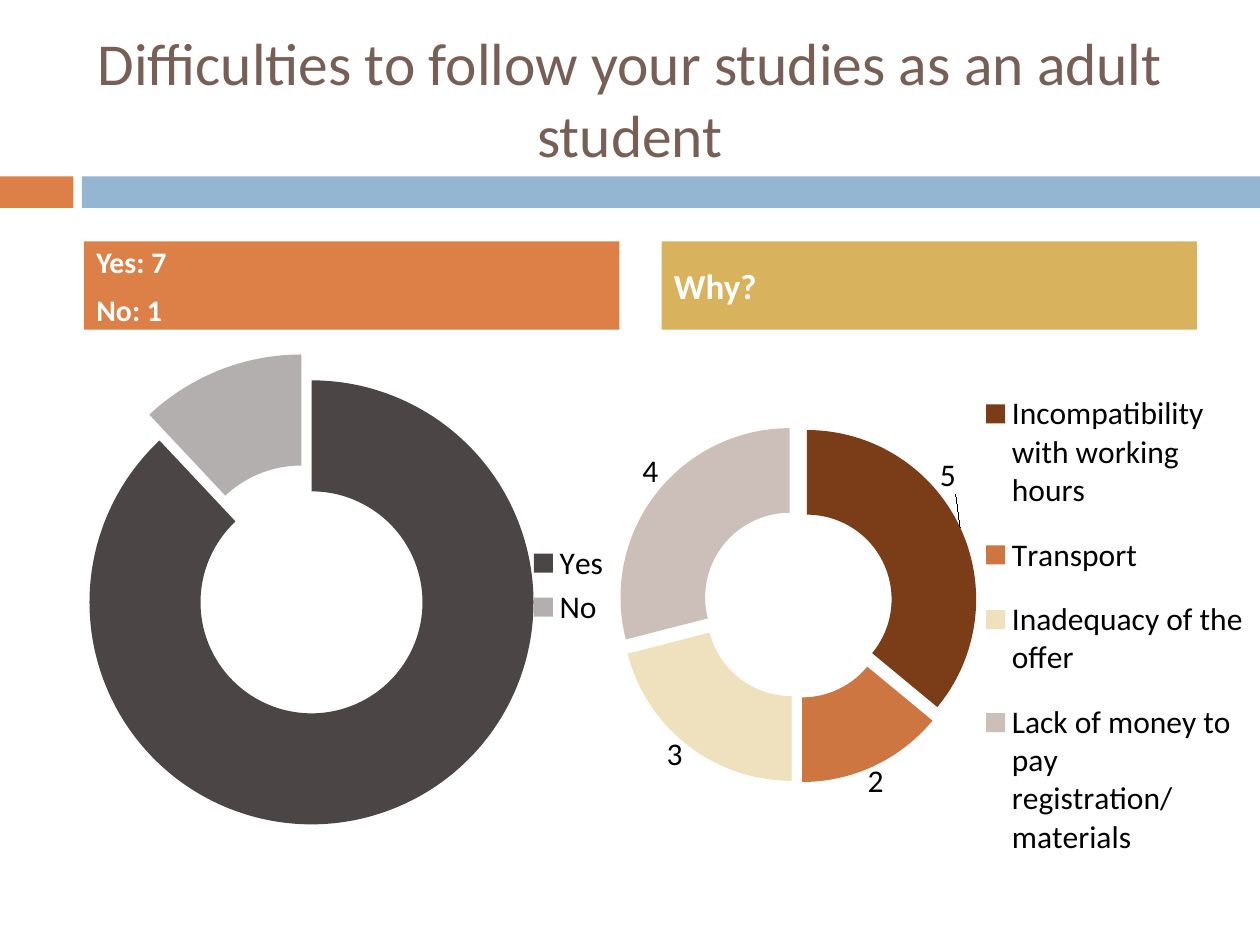
from lxml import etree
from pptx import Presentation
from pptx.chart.data import CategoryChartData
from pptx.dml.color import RGBColor
from pptx.enum.chart import XL_CHART_TYPE, XL_LEGEND_POSITION
from pptx.enum.shapes import MSO_SHAPE
from pptx.enum.text import MSO_ANCHOR, PP_ALIGN
from pptx.oxml.ns import qn
from pptx.util import Pt

RECT = MSO_SHAPE.RECTANGLE
RING = XL_CHART_TYPE.DOUGHNUT
RIGHT = XL_LEGEND_POSITION.RIGHT
MIDDLE = MSO_ANCHOR.MIDDLE
CENTER, LEFT = PP_ALIGN.CENTER, PP_ALIGN.LEFT

THEME = {
    "font": "Calibri", "title": "775F55", "text": "000000", "white": "FFFFFF",
    "orange": "DD8047", "blue": "94B6D2", "gold": "D8B25C",
    "title size": 34, "chart size": 18,
}
TITLE = "Difficulties to follow your studies as an adult student"
BANDS = [  # left, width, colour
    (0, 42, "orange"),
    (46.8, 673.2, "blue"),
]
HEADS = [  # left, colour, text size, lines
    (48, "orange", 17, ["Yes: 7", "No: 1"]),
    (378, "gold", 20, ["Why?"]),
]
# Plot, legend and label places are fractions of the chart's own box.
CHARTS = [
    {
        "box": (48, 192, 306, 282),
        "plot": (0.01, 0.09, 0.83, 0.9),
        "legend": (0.82, 0.41, 0.17, 0.19),
        "slices": [  # name, value, colour, explosion, label, label shift
            ("Yes", 88, "4C4545", 0, None, None),
            ("No", 12, "B3AFAE", 25, None, None),
        ],
    },
    {
        "box": (348, 192, 372, 306),
        "plot": (0.03, 0.18, 0.52, 0.64),
        "legend": (0.58, 0.06, 0.41, 0.89),
        "slices": [
            ("Incompatibility with working hours", 36, "7B3D17", 12, "5", (0.04, -0.13)),
            ("Transport", 14, "CD7642", 12, "2", (0.03, 0.1)),
            ("Inadequacy of the offer", 21, "EFE0BE", 12, "3", (-0.06, 0.08)),
            ("Lack of money to pay registration/materials", 29, "CCBEB8", 12,
             "4", (-0.06, -0.09)),
        ],
    },
]


def color(name):
    return RGBColor.from_string(THEME.get(name, name))


def style(font, size, tint, bold=False):
    font.name, font.size, font.bold = THEME["font"], Pt(size), bold
    font.color.rgb = color(tint)


def add_run(para, text, size, tint, bold=False):
    run = para.add_run()
    run.text = text
    style(run.font, size, tint, bold)


def add_rect(slide, box, tint):
    shape = slide.shapes.add_shape(RECT, *map(Pt, box))
    shape.shadow.inherit = False
    shape.fill.solid()
    shape.fill.fore_color.rgb = color(tint)
    shape.line.fill.background()
    return shape


def add_head(slide, left, tint, size, lines):
    frame = add_rect(slide, (left, 138, 306, 50.4), tint).text_frame
    frame.word_wrap = True
    frame.vertical_anchor = MIDDLE
    for i, line in enumerate(lines):
        para = frame.add_paragraph() if i else frame.paragraphs[0]
        para.alignment = LEFT
        para.space_before = Pt(7)
        add_run(para, line, size, "white", True)


def place(node, before, spots, edge=True):
    """Put a manual layout in a chart part, ahead of its child at an index."""
    for old in node.findall(qn("c:layout")):
        node.remove(old)
    layout = etree.Element(qn("c:layout"))
    manual = etree.SubElement(layout, qn("c:manualLayout"))
    if edge:
        for tag in ("xMode", "yMode"):
            etree.SubElement(manual, qn("c:" + tag), val="edge")
    for tag, spot in zip("xywh", spots):
        etree.SubElement(manual, qn("c:" + tag), val=str(spot))
    node.insert(before, layout)


def add_ring(slide, item):
    data = CategoryChartData()
    data.categories = [part[0] for part in item["slices"]]
    data.add_series("Series 1", [part[1] for part in item["slices"]])
    chart = slide.shapes.add_chart(RING, *map(Pt, item["box"]), data).chart
    chart.has_title = False
    style(chart.font, THEME["chart size"], "text")
    chart.has_legend = True
    chart.legend.position = RIGHT
    chart.legend.include_in_layout = False
    plot = chart.plots[0]
    plot.vary_by_categories = True

    series = plot.series[0]
    for i, (_, _, tint, shift, label, _) in enumerate(item["slices"]):
        point = series.points[i]
        point.format.fill.solid()
        point.format.fill.fore_color.rgb = color(tint)
        point.format.line.fill.background()
        if label:
            para = point.data_label.text_frame.paragraphs[0]
            add_run(para, label, THEME["chart size"], "text")

    root = chart.element
    for node, part in zip(root.iter(qn("c:dPt")), item["slices"]):
        burst = etree.Element(qn("c:explosion"), val=str(part[3]))
        node.find(qn("c:spPr")).addprevious(burst)
    for node, part in zip(root.iter(qn("c:dLbl")), item["slices"]):
        place(node, 1, part[5], edge=False)
    for hole in root.iter(qn("c:holeSize")):
        hole.set("val", "50")
    place(next(root.iter(qn("c:plotArea"))), 0, item["plot"])
    place(next(root.iter(qn("c:legend"))), 1, item["legend"])


def main():
    deck = Presentation()
    deck.slide_width, deck.slide_height = Pt(720), Pt(540)
    slide = deck.slides.add_slide(deck.slide_layouts[5])

    title = slide.shapes.title
    title.left, title.top, title.width, title.height = map(Pt, (0, 21.6, 720, 68.4))
    title.text_frame.word_wrap = True
    title.text_frame.vertical_anchor = MIDDLE
    para = title.text_frame.paragraphs[0]
    para.alignment = CENTER
    add_run(para, TITLE, THEME["title size"], "title")

    for left, width, tint in BANDS:
        add_rect(slide, (left, 100.8, width, 18), tint)
    for item in CHARTS:
        add_ring(slide, item)
    for head in HEADS:
        add_head(slide, *head)
    deck.save("out.pptx")


if __name__ == "__main__":
    main()
